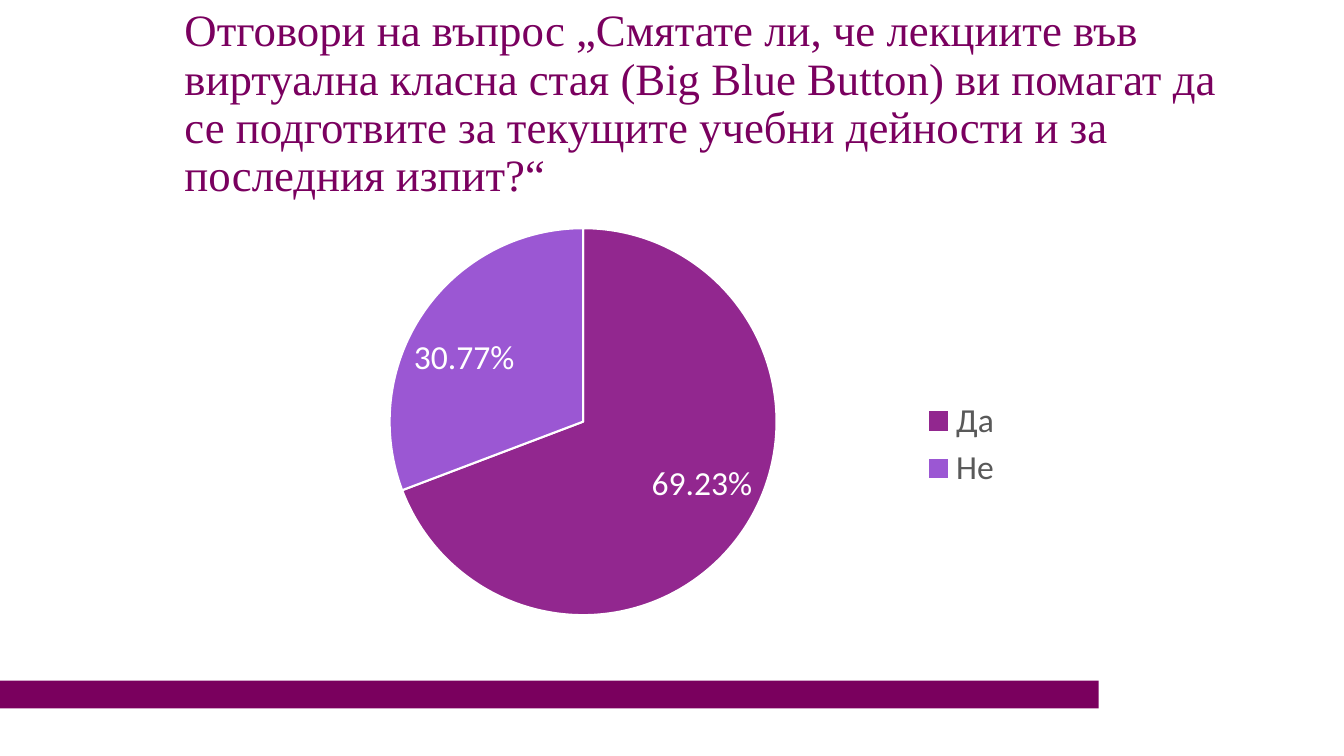
import pptx
import pptx.chart.data
import pptx.dml.color
import pptx.enum.chart
import pptx.enum.text
import pptx.enum.shapes
import pptx.oxml
import pptx.oxml.ns
import pptx.util
from pptx.util import Cm

QUESTION = (
    "Отговори на въпрос „Смятате ли, че лекциите във виртуална класна стая "
    "(Big Blue Button) ви помагат да се подготвите за текущите учебни дейности "
    "и за последния изпит?“"
)
ANSWERS = {"Да": (69.23, "92278F"), "Не": (30.77, "9B57D3")}


def rgb(value):
    return pptx.dml.color.RGBColor.from_string(value)


def style_font(font, name, size, color):
    font.name = name
    font.size = pptx.util.Pt(size)
    font.color.rgb = rgb(color)


def add_footer_bar(slide, left, top, width, height):
    bar = slide.shapes.add_shape(
        pptx.enum.shapes.MSO_SHAPE.RECTANGLE, left, top, width, height)
    bar.shadow.inherit = False
    bar.fill.solid()
    bar.fill.fore_color.rgb = rgb("7A005E")
    bar.line.fill.background()


def add_title(slide, left, top, width, height):
    tf = slide.shapes.add_textbox(left, top, width, height).text_frame
    tf.word_wrap = True
    tf.vertical_anchor = pptx.enum.text.MSO_ANCHOR.MIDDLE
    tf.text = QUESTION
    p = tf.paragraphs[0]
    p.line_spacing = 0.9
    style_font(p.runs[0].font, "Times New Roman", 32, "7A005F")


def set_plot_layout(chart, x, y, w, h):
    """Place the pie by fractions of the chart area."""
    plot_area = chart._chartSpace.chart.plotArea
    for old in plot_area.findall(pptx.oxml.ns.qn("c:layout")):
        plot_area.remove(old)
    plot_area.insert(0, pptx.oxml.parse_xml(
        f'<c:layout {pptx.oxml.ns.nsdecls("c")}><c:manualLayout>'
        '<c:layoutTarget val="inner"/><c:xMode val="edge"/><c:yMode val="edge"/>'
        f'<c:x val="{x}"/><c:y val="{y}"/><c:w val="{w}"/><c:h val="{h}"/>'
        '</c:manualLayout></c:layout>'))


def add_answer_pie(slide, left, top, width, height):
    data = pptx.chart.data.CategoryChartData(number_format='0.00"%"')
    data.categories = list(ANSWERS)
    data.add_series("Series 1", [share for share, _ in ANSWERS.values()])
    chart = slide.shapes.add_chart(
        pptx.enum.chart.XL_CHART_TYPE.PIE, left, top, width, height, data).chart
    style_font(chart.font, "Calibri", 10, "000000")
    chart.has_title = False
    set_plot_layout(chart, 0.21, 0.03, 0.49, 0.84)

    chart.has_legend = True
    chart.legend.position = pptx.enum.chart.XL_LEGEND_POSITION.RIGHT
    chart.legend.include_in_layout = False
    style_font(chart.legend.font, "Calibri", 24, "595959")

    plot = chart.plots[0]
    plot.vary_by_categories = True
    for i, (_, color) in enumerate(ANSWERS.values()):
        slice_format = plot.series[0].points[i].format
        slice_format.fill.solid()
        slice_format.fill.fore_color.rgb = rgb(color)
        slice_format.line.color.rgb = rgb("FFFFFF")
        slice_format.line.width = pptx.util.Pt(1.5)

    labels = plot.series[0].data_labels
    labels.show_value = True
    labels.number_format = '0.00"%"'
    labels.number_format_is_linked = False
    labels.position = pptx.enum.chart.XL_LABEL_POSITION.BEST_FIT
    style_font(labels.font, "Calibri", 24, "FFFFFF")


def main():
    prs = pptx.Presentation()
    prs.slide_width, prs.slide_height = Cm(33.87), Cm(19.05)
    s = prs.slides.add_slide(prs.slide_layouts[6])
    add_footer_bar(s, Cm(0), Cm(17.15), Cm(27.69), Cm(0.7))
    add_title(s, Cm(4.4), Cm(0.8), Cm(27.13), Cm(3.68))
    add_answer_pie(s, Cm(5.64), Cm(5.38), Cm(19.9), Cm(11.66))
    prs.save("out.pptx")


if __name__ == "__main__":
    main()
